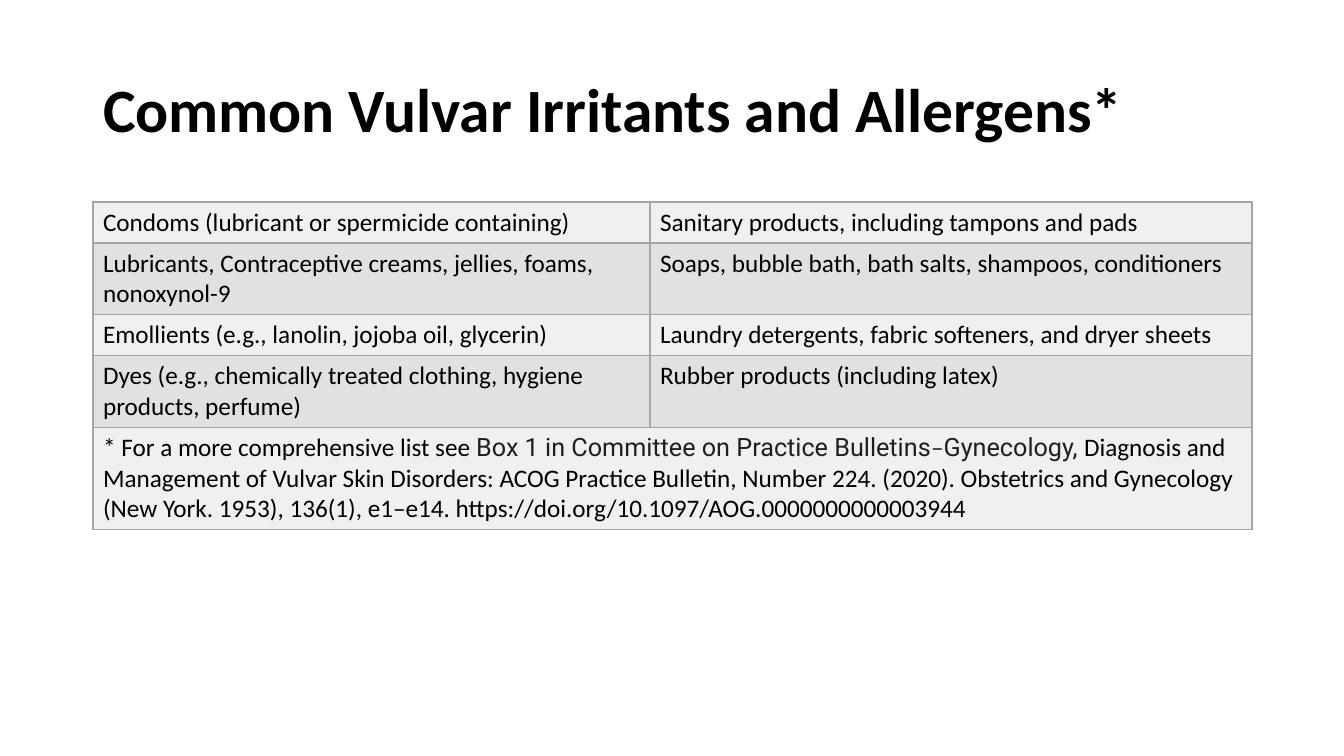
from lxml import etree
from pptx import Presentation
from pptx import util as u
from pptx.dml.color import RGBColor
from pptx.enum import text
from pptx.oxml.ns import qn

EMU_PER_PX = 914400 / 100.8
BLACK, INK = "000000", "211E1E"
BORDER = "A5A5A5"
BANDS = ("F0F0F0", "E1E1E1")

COLUMN_WIDTHS = (557, 602)
ROW_HEIGHTS = (41, 71, 41, 71, 102)
IRRITANTS = (
    ("Condoms (lubricant or spermicide containing)",
     "Sanitary products, including tampons and pads"),
    ("Lubricants, Contraceptive creams, jellies, foams, nonoxynol-9",
     "Soaps, bubble bath, bath salts, shampoos, conditioners"),
    ("Emollients (e.g., lanolin, jojoba oil, glycerin)",
     "Laundry detergents, fabric softeners, and dryer sheets"),
    ("Dyes (e.g., chemically treated clothing, hygiene products, perfume)",
     "Rubber products (including latex)"),
)
FOOTNOTE = (
    ("* For a more comprehensive list see ", "Calibri", BLACK),
    ("Box 1 in Committee on Practice Bulletins", "Roboto", INK),
    ("–", "Calibri", INK),
    ("Gynecology, ", "Roboto", INK),
    ("Diagnosis and Management of Vulvar Skin Disorders: ACOG Practice Bulletin, "
     "Number 224. (2020). Obstetrics and Gynecology (New York. 1953), 136(1), "
     "e1–e14. https://doi.org/10.1097/AOG.0000000000003944", "Calibri", BLACK),
)


def px(length):
    return u.Emu(round(length * EMU_PER_PX))


def rgb(color):
    return RGBColor.from_string(color)


def format_run(run, size, font="Calibri", color=BLACK, bold=False):
    run.font.size = u.Pt(size)
    run.font.name = font
    run.font.bold = bold
    run.font.color.rgb = rgb(color)


def add_title(slide, wording):
    title = slide.shapes.title
    title.left, title.top, title.width, title.height = map(px, (93, 40, 1159, 146))
    frame = title.text_frame
    frame.text = wording
    frame.word_wrap = True
    frame.vertical_anchor = text.MSO_ANCHOR.MIDDLE
    heading = frame.paragraphs[0]
    heading.alignment = text.PP_ALIGN.LEFT
    heading.line_spacing = 0.9
    format_run(heading.runs[0], 44, bold=True)


def style_cell(cell, band):
    # Borders come before the fill in the cell properties
    properties = cell._tc.get_or_add_tcPr()
    for side in ("a:lnL", "a:lnR", "a:lnT", "a:lnB"):
        line = etree.SubElement(properties, qn(side), w=str(u.Pt(1)))
        solid = etree.SubElement(line, qn("a:solidFill"))
        etree.SubElement(solid, qn("a:srgbClr"), val=BORDER)
    cell.fill.solid()
    cell.fill.fore_color.rgb = rgb(band)


def fill_cell(cell, pieces):
    paragraph = cell.text_frame.paragraphs[0]
    for wording, font, color in pieces:
        run = paragraph.add_run()
        run.text = wording
        format_run(run, 18, font, color)


def add_irritants_table(slide):
    frame = slide.shapes.add_table(
        len(ROW_HEIGHTS), len(COLUMN_WIDTHS), px(93), px(202),
        px(sum(COLUMN_WIDTHS)), px(sum(ROW_HEIGHTS)))
    table = frame.table
    table.first_row = False
    for column, width in zip(table.columns, COLUMN_WIDTHS):
        column.width = px(width)
    for index, (row, height) in enumerate(zip(table.rows, ROW_HEIGHTS)):
        row.height = px(height)
        for cell in row.cells:
            style_cell(cell, BANDS[index % 2])

    for row, entries in zip(table.rows, IRRITANTS):
        for cell, entry in zip(row.cells, entries):
            fill_cell(cell, [(entry, "Calibri", BLACK)])

    # Footnote across both columns
    last = len(ROW_HEIGHTS) - 1
    footnote = table.cell(last, 0)
    footnote.merge(table.cell(last, 1))
    fill_cell(footnote, FOOTNOTE)


def main():
    deck = Presentation()
    deck.slide_width, deck.slide_height = px(1344), px(756)
    slide = deck.slides.add_slide(deck.slide_layouts[5])
    add_title(slide, "Common Vulvar Irritants and Allergens*")
    add_irritants_table(slide)
    deck.save("out.pptx")


if __name__ == "__main__":
    main()
